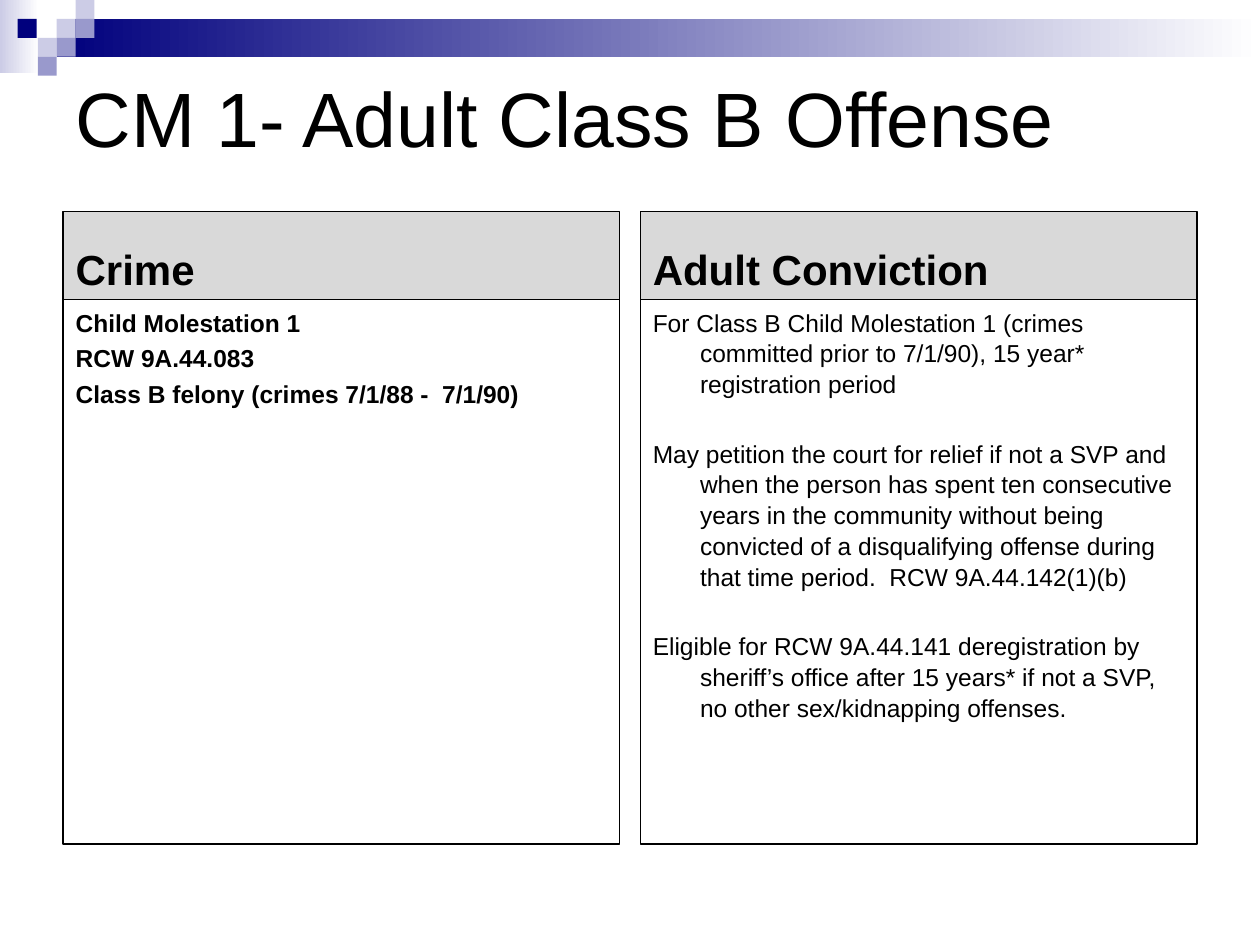
from dataclasses import dataclass

from lxml import etree
from pptx import Presentation
from pptx.dml.color import RGBColor
from pptx.enum.shapes import MSO_SHAPE
from pptx.enum.text import MSO_ANCHOR, MSO_AUTO_SIZE, PP_ALIGN
from pptx.oxml.ns import qn
from pptx.util import Pt

RECT = MSO_SHAPE.RECTANGLE
TOP, MID, LOW = MSO_ANCHOR.TOP, MSO_ANCHOR.MIDDLE, MSO_ANCHOR.BOTTOM
LEFT = PP_ALIGN.LEFT
FIXED = MSO_AUTO_SIZE.NONE


@dataclass(frozen=True)
class Theme:
    font: str = "Arial"
    ink: str = "000000"
    paper: str = "FFFFFF"
    head: str = "D9D9D9"
    navy: str = "00007D"
    mid: str = "9999CC"
    pale: str = "CCCCE6"
    title: int = 44
    label: int = 24
    body: int = 14
    edge: float = 0.75
    hang: int = 27


class Deck:
    def __init__(self, theme):
        self.theme = theme
        self.file = Presentation()
        self.file.slide_width, self.file.slide_height = Pt(720), Pt(540)
        self.slide = self.file.slides.add_slide(self.file.slide_layouts[4])
        self.depth = 2

    def block(self, box, color, fade=None):
        """Add a plain rectangle behind the text, fading rightward if asked."""
        shape = self.slide.shapes.add_shape(RECT, *map(Pt, box))
        shape.shadow.inherit = False
        shape.line.fill.background()
        if fade:
            shape.fill.gradient()
            shape.fill.gradient_angle = 0
            for stop, tone, place in zip(shape.fill.gradient_stops, (color, fade), (0, 1)):
                stop.color.rgb = RGBColor.from_string(tone)
                stop.position = place
        else:
            shape.fill.solid()
            shape.fill.fore_color.rgb = RGBColor.from_string(color)
        self.slide.shapes._spTree.insert(self.depth, shape._element)
        self.depth += 1

    def text(self, slot, box, lines, size, anchor, bold=False):
        """Place and fill the placeholder with index slot."""
        shape = self.slide.placeholders[slot]
        shape.left, shape.top, shape.width, shape.height = map(Pt, box)
        frame = shape.text_frame
        frame.text = "\n".join(lines)
        frame.auto_size, frame.word_wrap = FIXED, True
        frame.vertical_anchor = anchor
        for para in frame.paragraphs:
            para.alignment = LEFT
            font = para.font
            font.name, font.size, font.bold = self.theme.font, Pt(size), bold
            font.color.rgb = RGBColor.from_string(self.theme.ink)
        return shape

    def frame(self, shape):
        shape.line.color.rgb = RGBColor.from_string(self.theme.ink)
        shape.line.width = Pt(self.theme.edge)

    def label(self, slot, box, word):
        shape = self.text(slot, box, [word], self.theme.label, LOW, True)
        shape.fill.solid()
        shape.fill.fore_color.rgb = RGBColor.from_string(self.theme.head)
        self.frame(shape)

    def list(self, slot, box, lines, gap, bold):
        """Fill a framed list with hanging indents and gap points between items."""
        shape = self.text(slot, box, lines, self.theme.body, TOP, bold)
        self.frame(shape)
        for index, para in enumerate(shape.text_frame.paragraphs):
            para.line_spacing = 1.05
            para.space_before = Pt(gap if index else 2.8)
            props = para._p.get_or_add_pPr()
            props.set("marL", str(Pt(self.theme.hang)))
            props.set("indent", str(-Pt(self.theme.hang)))
            none = etree.Element(qn("a:buNone"))
            props.insert_element_before(none, "a:tabLst", "a:defRPr", "a:extLst")


def main():
    look = Theme()
    deck = Deck(look)

    deck.block((0, 0, 22.3, 41.8), look.pale, look.paper)
    deck.block((32.4, 10.8, 687.6, 21.6), look.navy, look.paper)
    side = 10.8
    tiles = [(1, 1, look.pale), (2, 0, look.pale), (2, 1, look.mid),
             (0, 2, look.pale), (1, 2, look.mid), (0, 3, look.mid)]
    for col, row, color in tiles:
        deck.block((21.6 + col * side, row * side, side, side), color)
    deck.block((10.1, side, side, side), look.navy)

    deck.text(0, (36, 21.6, 648, 90), ["CM 1- Adult Class B Offense"], look.title, MID)

    panels = [
        ("Crime", 2.8, True, [
            "Child Molestation 1",
            "RCW 9A.44.083",
            "Class B felony (crimes 7/1/88 -  7/1/90)",
        ]),
        ("Adult Conviction", 22, False, [
            "For Class B Child Molestation 1 (crimes committed prior to 7/1/90), "
            "15 year* registration period",
            "May petition the court for relief if not a SVP and when the person has "
            "spent ten consecutive years in the community without being convicted of "
            "a disqualifying offense during that time period.  RCW 9A.44.142(1)(b)",
            "Eligible for RCW 9A.44.141 deregistration by sheriff’s office after "
            "15 years* if not a SVP, no other sex/kidnapping offenses.",
        ]),
    ]
    wide, top, split, end = 318.2, 120.9, 171.3, 482.3
    for index, (word, gap, bold, lines) in enumerate(panels):
        left = 36 + index * (648 - wide)
        deck.label(1 + 2 * index, (left, top, wide, split - top), word)
        deck.list(2 + 2 * index, (left, split, wide, end - split), lines, gap, bold)

    deck.file.save("out.pptx")


if __name__ == "__main__":
    main()
